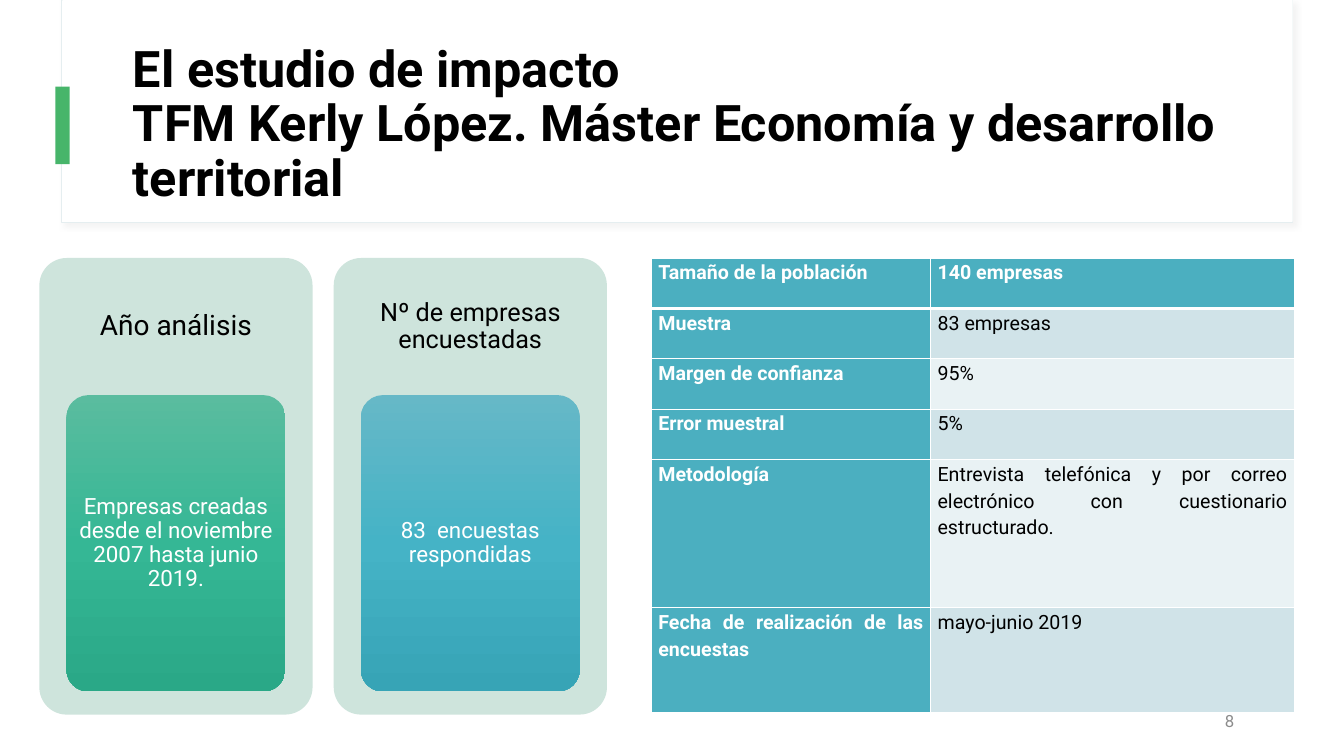
from dataclasses import dataclass
from copy import deepcopy

from lxml import etree
from pptx import Presentation
from pptx.dml.color import RGBColor
from pptx.enum import shapes, text
from pptx.oxml import parse_xml
from pptx.oxml.ns import qn
from pptx.util import Inches, Pt

FONT = "Roboto"
COLORS = {
    "white": "FFFFFF", "black": "000000", "frame": "E5EEF0", "shadow": "D9D9D9",
    "accent": "47B56A", "card": "CEE4DC", "label": "4BAFC0",
    "odd": "D0E3E8", "even": "E9F2F4", "number": "8C8C8C",
}
NS = 'xmlns:a="http://schemas.openxmlformats.org/drawingml/2006/main"'
ALIGN = text.PP_ALIGN
MIDDLE = text.MSO_ANCHOR.MIDDLE


@dataclass
class Card:
    heading: str
    heading_size: int
    inset: float
    body: str
    gradient: tuple[str, str, str]


@dataclass
class Row:
    label: str
    value: str
    height: float = 0.5


CARDS = [
    Card("Año análisis", 20, 0.08,
         "Empresas creadas desde el noviembre 2007 hasta junio 2019.",
         ("5ABC9F", "35B795", "2AA887")),
    Card("Nº de empresas encuestadas", 18, 0.07,
         "83  encuestas respondidas",
         ("66B8C7", "45B3C6", "37A4B6")),
]
ROWS = [
    Row("Tamaño de la población", "140 empresas"),
    Row("Muestra", "83 empresas"),
    Row("Margen de confianza", "95%"),
    Row("Error muestral", "5%"),
    Row("Metodología", "Entrevista telefónica y por correo electrónico "
        "con cuestionario estructurado.", 1.47),
    Row("Fecha de realización de las encuestas", "mayo-junio 2019", 1.04),
]


def rgb(name: str) -> RGBColor:
    return RGBColor.from_string(COLORS[name])


def style(p, size: int, color: str, align=ALIGN.LEFT, spacing: float = 1.0,
          bold: bool = False) -> None:
    p.alignment, p.line_spacing = align, spacing
    f = p.font
    f.name, f.size, f.bold, f.color.rgb = FONT, Pt(size), bold, rgb(color)


def write(sp, words: str, size: int, color: str, align=ALIGN.LEFT,
          spacing: float = 1.0, bold: bool = False,
          insets: tuple[float, float] = (0.1, 0.05)) -> None:
    tf = sp.text_frame
    tf.word_wrap, tf.vertical_anchor = True, MIDDLE
    tf.margin_left = tf.margin_right = Inches(insets[0])
    tf.margin_top = tf.margin_bottom = Inches(insets[1])
    p = tf.paragraphs[0]
    p.text = words
    style(p, size, color, align, spacing, bold)


def add_box(slide, left: float, top: float, width: float, height: float,
            color: str, rounded: bool = False):
    kind = shapes.MSO_SHAPE.ROUNDED_RECTANGLE if rounded else shapes.MSO_SHAPE.RECTANGLE
    sp = slide.shapes.add_shape(kind, Inches(left), Inches(top), Inches(width), Inches(height))
    if rounded:
        sp.adjustments[0] = 0.1
    sp.shadow.inherit = False
    sp.fill.solid()
    sp.fill.fore_color.rgb = rgb(color)
    sp.line.fill.background()
    return sp


def add_text(slide, left: float, top: float, width: float, height: float):
    return slide.shapes.add_textbox(Inches(left), Inches(top), Inches(width), Inches(height))


def set_gradient(sp, colors: tuple[str, str, str]) -> None:
    sp.fill.gradient()
    sp.fill.gradient_angle = 270
    stops = sp.element.spPr.find(".//" + qn("a:gsLst"))
    stops.append(deepcopy(stops[-1]))
    for i, (stop, color) in enumerate(zip(sp.fill.gradient_stops, colors)):
        stop.position = i / 2
        stop.color.rgb = RGBColor.from_string(color)


def add_header(slide) -> None:
    frame = add_box(slide, 0.61, 0, 12.21, 2.21, "white")
    frame.line.color.rgb, frame.line.width = rgb("frame"), Pt(0.75)
    effects = frame.element.spPr.find(qn("a:effectLst"))
    effects.append(parse_xml(
        f'<a:outerShdw {NS} blurRad="{Pt(4)}" dist="{Pt(3)}" dir="2700000" algn="tl">'
        f'<a:srgbClr val="{COLORS["shadow"]}"><a:alpha val="30000"/></a:srgbClr>'
        '</a:outerShdw>'))
    add_box(slide, 0.62, 0, 12.2, 2.2, "white")
    add_box(slide, 0.55, 0.86, 0.14, 0.77, "accent")
    write(add_text(slide, 1.22, 0.6, 11.12, 1.29),
          "El estudio de impacto\vTFM Kerly López. Máster Economía y desarrollo territorial",
          36, "black", spacing=0.9, bold=True)


def add_card(slide, card: Card, left: float) -> None:
    add_box(slide, left, 2.56, 2.71, 4.53, "card", rounded=True)
    write(add_text(slide, left, 2.56, 2.71, 1.36), card.heading, card.heading_size,
          "black", ALIGN.CENTER, 0.9, insets=(card.inset, card.inset))
    sp = add_box(slide, left + 0.27, 3.92, 2.17, 2.94, "card", rounded=True)
    set_gradient(sp, card.gradient)
    write(sp, card.body, 16, "white", ALIGN.CENTER, 0.9, insets=(0.04, 0.03))


def set_borders(cell, top: float, bottom: float) -> None:
    tc_pr = cell._tc.get_or_add_tcPr()
    for i, (side, width) in enumerate((("L", 1), ("R", 1), ("T", top), ("B", bottom))):
        ln = etree.Element(qn(f"a:ln{side}"), w=str(Pt(width)))
        fill = etree.SubElement(ln, qn("a:solidFill"))
        etree.SubElement(fill, qn("a:srgbClr"), val=COLORS["white"])
        tc_pr.insert(i, ln)


def add_data_table(slide, rows: list[Row]) -> None:
    table = slide.shapes.add_table(len(rows), 2, Inches(6.46), Inches(2.56),
                                   Inches(6.38), Inches(4.53)).table
    for column, width in zip(table.columns, (2.77, 3.61)):
        column.width = Inches(width)
    for i, row in enumerate(rows):
        table.rows[i].height = Inches(row.height)
        for j, words in enumerate((row.label, row.value)):
            strong = i == 0 or j == 0
            cell = table.cell(i, j)
            cell.margin_left = cell.margin_right = Inches(0.07)
            cell.margin_top = cell.margin_bottom = 0
            cell.fill.solid()
            cell.fill.fore_color.rgb = rgb("label" if strong else "odd" if i % 2 else "even")
            set_borders(cell, top=3 if i == 1 else 1, bottom=3 if i == 0 else 1)
            p = cell.text_frame.paragraphs[0]
            p.text = words
            p.space_before, p.space_after = Pt(6), Pt(10)
            style(p, 14, "white" if strong else "black", ALIGN.JUSTIFY, 1.15, strong)


def main() -> None:
    prs = Presentation()
    prs.slide_width, prs.slide_height = Inches(13.33), Inches(7.5)
    slide = prs.slides.add_slide(prs.slide_layouts[6])

    # Title band
    add_header(slide)

    # Cards on the left
    for i, card in enumerate(CARDS):
        add_card(slide, card, 0.39 + i * 2.92)

    # Survey data on the right
    add_data_table(slide, ROWS)

    # Slide number
    write(add_text(slide, 9.34, 6.95, 3, 0.4), "8", 12, "number", ALIGN.RIGHT)

    prs.save("out.pptx")


if __name__ == "__main__":
    main()
